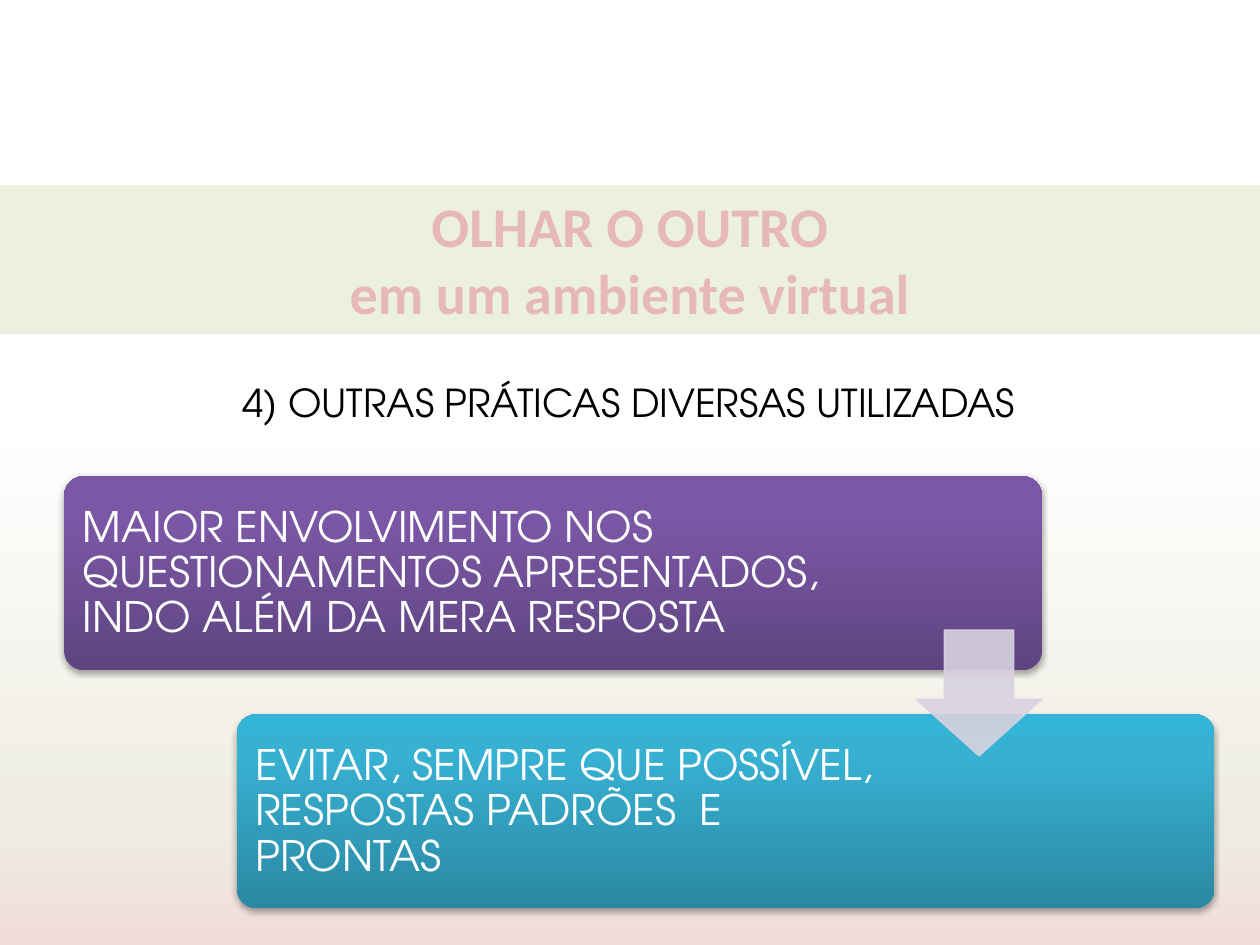
from lxml.etree import SubElement as Sub
from pptx import Presentation
from pptx.dml.color import RGBColor
from pptx.enum.shapes import MSO_SHAPE as Shape
from pptx.enum.text import MSO_ANCHOR as Anchor, MSO_AUTO_SIZE as Auto, PP_ALIGN as Align
from pptx.oxml.ns import qn
from pptx.util import Inches, Pt

HUES = {
    "band": "EBF1DE", "title": "E6B9B8", "edge": "C0504D",
    "black": "000000", "white": "FFFFFF", "arrow": "D8D3E0",
}
PAGE = [(44, "FFFFFF"), (88, "EEECE1"), (100, "F2DCDB")]
PURPLE = [(0, "5F4480"), (80, "7B58A6"), (100, "7C57A8")]
TEAL = [(0, "2A88A2"), (80, "37B1D2"), (100, "34B4D6")]
FONT = "TeX Gyre Adventor"
CARDS = [
    (0.51, 3.78, 6.17, PURPLE,
     "MAIOR ENVOLVIMENTO NOS QUESTIONAMENTOS APRESENTADOS, INDO ALÉM DA MERA RESPOSTA"),
    (1.88, 5.67, 5.3, TEAL,
     "EVITAR, SEMPRE QUE POSSÍVEL, RESPOSTAS PADRÕES  E PRONTAS"),
]


def rgb(name):
    return RGBColor.from_string(HUES[name])


def place(item, x, y, w, h):
    item.left, item.top, item.width, item.height = map(Inches, (x, y, w, h))


def add_hue(node, hue, alpha=100):
    clr = Sub(node, qn("a:srgbClr"), val=hue)
    if alpha < 100:
        Sub(clr, qn("a:alpha"), val=str(alpha * 1000))


def blend(fill, root, stops, angle):
    """Give fill, found under root, a linear gradient; angle runs clockwise."""
    fill.gradient()
    grad = next(root.iter(qn("a:gradFill")))
    for node in list(grad):
        grad.remove(node)
    ramp = Sub(grad, qn("a:gsLst"))
    for pos, hue in stops:
        add_hue(Sub(ramp, qn("a:gs"), pos=str(pos * 1000)), hue)
    Sub(grad, qn("a:lin"), ang=str(angle * 60000), scaled="0")


def add_run(para, text, size, hue, font=FONT, bold=False):
    run = para.add_run()
    run.text = text
    face = run.font
    face.name, face.size, face.bold = font, Pt(size), bold
    face.color.rgb = rgb(hue)
    return run


def add_text(slide, x, y, w, h, text, size, hue):
    box = slide.shapes.add_textbox(*map(Inches, (x, y, w, h)))
    frame = box.text_frame
    frame.word_wrap = True
    add_run(frame.paragraphs[0], text, size, hue)
    return frame


def set_title(slide, lines):
    title = slide.shapes.title
    place(title, 0, 1.47, 10, 1.18)
    title.fill.solid()
    title.fill.fore_color.rgb = rgb("band")
    frame = title.text_frame
    frame.auto_size = Auto.SHAPE_TO_FIT_TEXT
    frame.vertical_anchor = Anchor.TOP
    for i, line in enumerate(lines):
        para = frame.add_paragraph() if i else frame.paragraphs[0]
        para.alignment = Align.CENTER
        run = add_run(para, line, 32, "title", "Calibri", True)
        props = run.font._element
        edge = Sub(props, qn("a:ln"), w=str(Pt(1.75)))
        add_hue(Sub(edge, qn("a:solidFill")), HUES["edge"])
        props.insert(0, edge)


def add_card(slide, x, y, wide, stops, text):
    card = slide.shapes.add_shape(Shape.ROUNDED_RECTANGLE, *map(Inches, (x, y, 7.76, 1.54)))
    card.adjustments[0] = 0.1
    blend(card.fill, card.element, stops, 270)
    card.line.fill.background()
    card.shadow.inherit = False
    effects = next(card.element.iter(qn("a:effectLst")))
    shade = Sub(effects, qn("a:outerShdw"), blurRad=str(Pt(3.1)), dist=str(Pt(1.8)),
                dir="5400000", rotWithShape="0")
    add_hue(shade, HUES["black"], 35)

    frame = add_text(slide, x + 0.05, y + 0.05, wide, 1.45, text, 24, "white")
    frame.vertical_anchor = Anchor.MIDDLE
    frame.margin_left = frame.margin_right = Inches(0.1)
    frame.margin_top = frame.margin_bottom = Inches(0.1)
    frame.paragraphs[0].line_spacing = 0.9


def add_arrow(slide):
    arrow = slide.shapes.add_shape(Shape.DOWN_ARROW, *map(Inches, (7.27, 5, 1, 1)))
    arrow.adjustments[0], arrow.adjustments[1] = 0.55, 0.45
    arrow.shadow.inherit = False
    arrow.line.width = Pt(0.75)
    for fill in (arrow.fill, arrow.line.fill):
        fill.solid()
        fill.fore_color.rgb = rgb("arrow")
    for clr in arrow.element.spPr.iter(qn("a:srgbClr")):
        Sub(clr, qn("a:alpha"), val="90000")


def main():
    deck = Presentation()
    deck.slide_width, deck.slide_height = Inches(10), Inches(7.5)
    slide = deck.slides.add_slide(deck.slide_layouts[5])
    blend(slide.background.fill, slide.element, PAGE, 90)
    set_title(slide, ["OLHAR O OUTRO", "em um ambiente virtual"])
    head = add_text(slide, 0, 2.96, 9.98, 0.47,
                    "4) OUTRAS PRÁTICAS DIVERSAS UTILIZADAS", 22, "black")
    head.paragraphs[0].alignment = Align.CENTER
    for card in CARDS:
        add_card(slide, *card)
    add_arrow(slide)
    deck.save("out.pptx")


if __name__ == "__main__":
    main()
